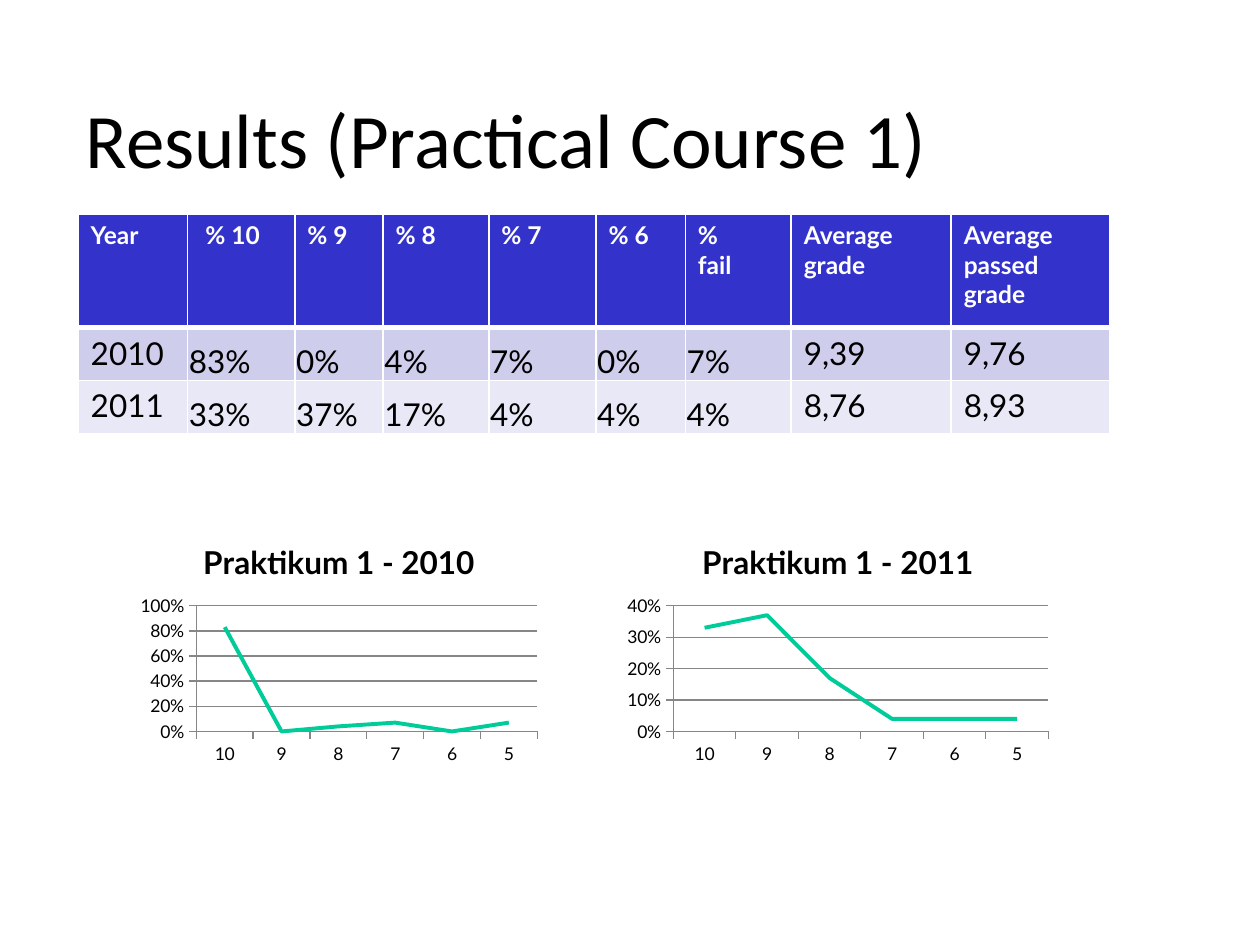
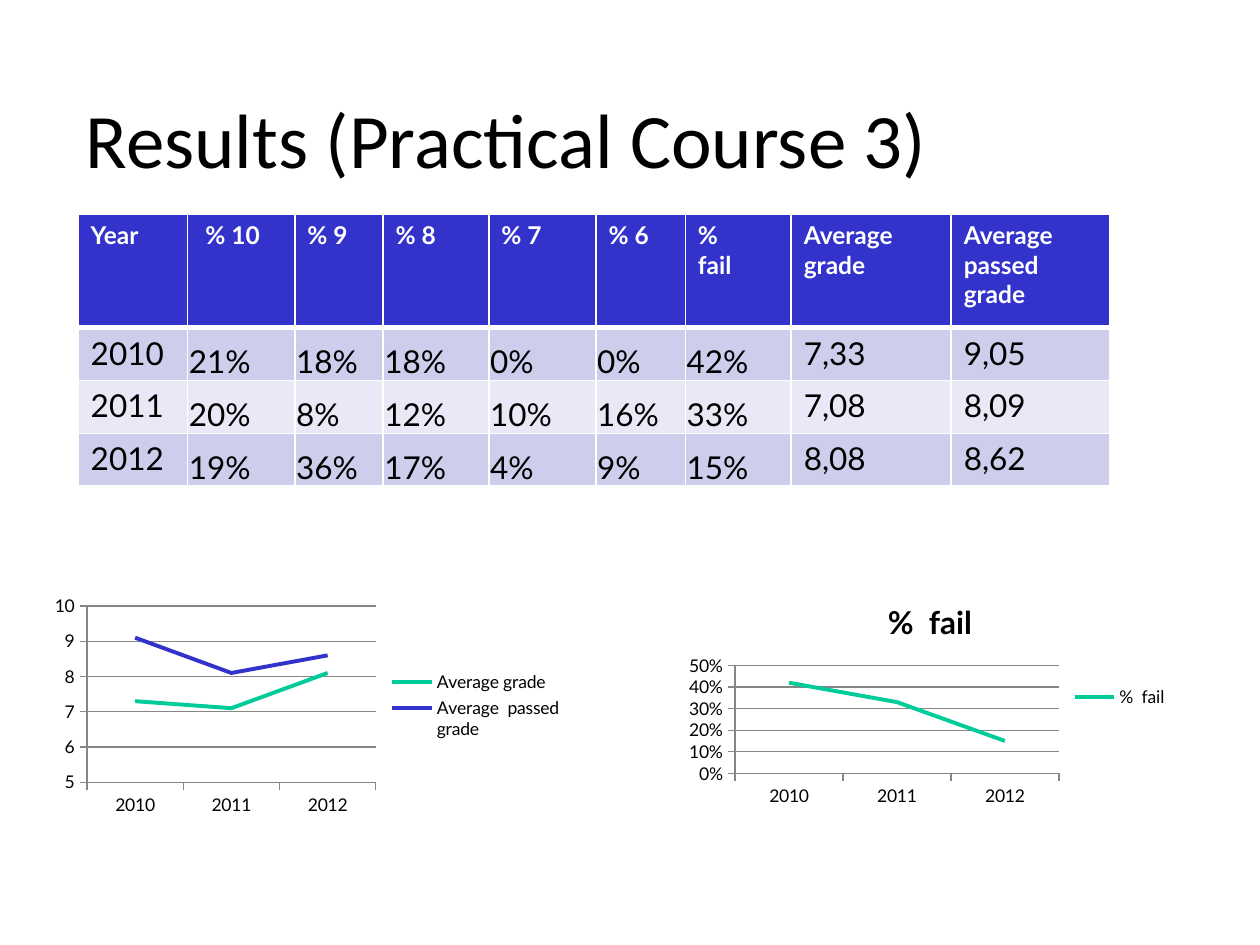
from lxml import etree
from pptx import Presentation
from pptx.chart.data import CategoryChartData
from pptx.dml.color import RGBColor
from pptx.enum.chart import XL_CHART_TYPE, XL_LEGEND_POSITION, XL_TICK_MARK
from pptx.enum.text import MSO_ANCHOR, MSO_AUTO_SIZE, PP_ALIGN
from pptx.oxml.ns import qn
from pptx.util import Inches, Pt

LINE_CHART = XL_CHART_TYPE.LINE
LEGEND_RIGHT = XL_LEGEND_POSITION.RIGHT
TICK_OUTSIDE = XL_TICK_MARK.OUTSIDE
TICK_NONE = XL_TICK_MARK.NONE
TOP, MIDDLE, BOTTOM = MSO_ANCHOR.TOP, MSO_ANCHOR.MIDDLE, MSO_ANCHOR.BOTTOM
LEFT = PP_ALIGN.LEFT
NO_AUTOFIT = MSO_AUTO_SIZE.NONE
TITLE_ONLY = 5

BLACK, WHITE, GRAY = "000000", "FFFFFF", "868686"
BLUE, GREEN = "3333CC", "00CC99"
BANDS = ("CECEEC", "E8E8F6")

TITLE_FORMAT = {"name": "Calibri", "size": Pt(44), "bold": False}
HEADER_FORMAT = {"name": "Lato", "size": Pt(14), "bold": True}
BODY_FORMAT = {"name": "Lato", "size": Pt(18), "bold": False}
CHART_FORMAT = {"name": "Lato", "size": Pt(10), "bold": False}
CHART_TITLE_FORMAT = {"name": "Lato", "size": Pt(18), "bold": True}

PERCENT_MARGINS = {"margin_left": 0.01, "margin_top": 0.01,
                   "margin_right": 0.01, "margin_bottom": 0}
HEADERS = ["Year", "% 10", "% 9", "% 8", "% 7", "% 6", "%\vfail",
           "Average grade", "Average passed\vgrade"]
COLUMN_WIDTHS = [0.87, 0.85, 0.7, 0.84, 0.85, 0.71, 0.84, 1.27, 1.26]
HEADER_HEIGHT, ROW_HEIGHT = 0.9, 0.42
PERCENT_COLUMNS = range(1, 7)
FAIL_COLUMN, AVERAGE_COLUMN, PASSED_COLUMN = 6, 7, 8
GRADES = ["10", "9", "8", "7", "6", "5"]

COURSE_1 = [
    ["2010", "83%", "0%", "4%", "7%", "0%", "7%", "9,39", "9,76"],
    ["2011", "33%", "37%", "17%", "4%", "4%", "4%", "8,76", "8,93"],
]
COURSE_3 = [
    ["2010", "21%", "18%", "18%", "0%", "0%", "42%", "7,33", "9,05"],
    ["2011", "20%", "8%", "12%", "10%", "16%", "33%", "7,08", "8,09"],
    ["2012", "19%", "36%", "17%", "4%", "9%", "15%", "8,08", "8,62"],
]
AVERAGES = {"Average grade": [7.3, 7.1, 8.1],
            "Average  passed  grade": [9.1, 8.1, 8.6]}
FAIL_NAME = "%  fail"


def rgb(color):
    """Turn a hex string into a colour."""
    return RGBColor.from_string(color)


def format_font(font, settings, color):
    """Apply a dict of settings and a colour to a font."""
    for name, value in settings.items():
        setattr(font, name, value)
    font.color.rgb = rgb(color)


def share(text):
    """Read a percentage from the table as a fraction."""
    return int(text.rstrip("%")) / 100


def add_titled_slide(presentation, text):
    """Add a slide with a left-aligned title."""
    slide = presentation.slides.add_slide(presentation.slide_layouts[TITLE_ONLY])
    title = slide.shapes.title
    title.left, title.top, title.width, title.height = map(
        Inches, (0.58, 0.52, 8.92, 1.15))
    frame = title.text_frame
    frame.text = text
    frame.auto_size = NO_AUTOFIT
    frame.vertical_anchor = MIDDLE
    paragraph = frame.paragraphs[0]
    paragraph.alignment = LEFT
    format_font(paragraph.font, TITLE_FORMAT, BLACK)
    return slide


def set_borders(cell, bottom_width):
    """Draw white borders round a cell."""
    properties = cell._tc.get_or_add_tcPr()
    widths = {"a:lnL": 1, "a:lnR": 1, "a:lnT": 1, "a:lnB": bottom_width}
    for tag, width in widths.items():
        line = etree.SubElement(properties, qn(tag), w=str(Pt(width)))
        fill = etree.SubElement(line, qn("a:solidFill"))
        etree.SubElement(fill, qn("a:srgbClr"), val=WHITE)


def fill_cell(cell, text, settings, color, fill, bottom_width=1):
    """Write and colour one table cell."""
    set_borders(cell, bottom_width)
    cell.fill.solid()
    cell.fill.fore_color.rgb = rgb(fill)
    cell.vertical_anchor = TOP
    cell.text = text
    format_font(cell.text_frame.paragraphs[0].font, settings, color)


def add_results_table(slide, results):
    """Add the table of grade shares and averages per year."""
    height = HEADER_HEIGHT + ROW_HEIGHT * len(results)
    table = slide.shapes.add_table(
        len(results) + 1, len(HEADERS), Inches(0.62), Inches(1.7),
        Inches(sum(COLUMN_WIDTHS)), Inches(height)).table
    for index, (header, width) in enumerate(zip(HEADERS, COLUMN_WIDTHS)):
        table.columns[index].width = Inches(width)
        fill_cell(table.cell(0, index), header, HEADER_FORMAT, WHITE, BLUE, 3)
    table.cell(0, 1).margin_left = Inches(0.14)
    table.rows[0].height = Inches(HEADER_HEIGHT)
    for row_index, row in enumerate(results, 1):
        table.rows[row_index].height = Inches(ROW_HEIGHT)
        band = BANDS[(row_index - 1) % 2]
        for index, text in enumerate(row):
            cell = table.cell(row_index, index)
            fill_cell(cell, text, BODY_FORMAT, BLACK, band)
            if index in PERCENT_COLUMNS:
                cell.vertical_anchor = BOTTOM
                for name, margin in PERCENT_MARGINS.items():
                    setattr(cell, name, Inches(margin))


def style_axis(axis):
    """Give an axis a gray line and outside ticks."""
    axis.major_tick_mark = TICK_OUTSIDE
    axis.minor_tick_mark = TICK_NONE
    axis.format.line.color.rgb = rgb(GRAY)
    axis.format.line.width = Pt(0.75)


def add_line_chart(slide, box, categories, series, number_format,
                   title=None, legend=False):
    """Add a line chart and return it."""
    data = CategoryChartData(number_format=number_format)
    data.categories = categories
    for name, values in series.items():
        data.add_series(name, values)
    chart = slide.shapes.add_chart(LINE_CHART, *map(Inches, box), data).chart
    format_font(chart.font, CHART_FORMAT, BLACK)
    chart.has_title = title is not None
    if title:
        frame = chart.chart_title.text_frame
        frame.text = title
        format_font(frame.paragraphs[0].runs[0].font, CHART_TITLE_FORMAT, BLACK)
    chart.has_legend = legend
    if legend:
        chart.legend.position = LEGEND_RIGHT
        chart.legend.include_in_layout = False
    style_axis(chart.category_axis)
    value_axis = chart.value_axis
    style_axis(value_axis)
    value_axis.has_major_gridlines = True
    value_axis.major_gridlines.format.line.color.rgb = rgb(GRAY)
    value_axis.tick_labels.number_format = number_format
    value_axis.tick_labels.number_format_is_linked = False
    chart.plots[0].vary_by_categories = False
    for line, color in zip(chart.plots[0].series, (GREEN, BLUE)):
        line.smooth = False
        line.format.line.color.rgb = rgb(color)
        line.format.line.width = Pt(2.25)
    return chart


def add_course_1(presentation):
    """Add the results of the first practical course."""
    slide = add_titled_slide(presentation, "Results (Practical Course 1)")
    add_results_table(slide, COURSE_1)
    boxes = [(1.05, 4.14, 3.28, 1.97), (4.91, 4.14, 3.48, 1.97)]
    for box, row in zip(boxes, COURSE_1):
        name = f"Praktikum 1 - {row[0]}"
        shares = [share(row[index]) for index in PERCENT_COLUMNS]
        add_line_chart(slide, box, GRADES, {name: shares}, "0%", name)


def add_course_3(presentation):
    """Add the results of the third practical course."""
    slide = add_titled_slide(presentation, "Results (Practical Course 3)")
    add_results_table(slide, COURSE_3)
    years = [row[0] for row in COURSE_3]
    chart = add_line_chart(slide, (0.35, 4.69, 4.25, 1.82), years, AVERAGES,
                           "General", legend=True)
    chart.value_axis.minimum_scale = 5
    chart.value_axis.major_unit = 1
    failures = {FAIL_NAME: [share(row[FAIL_COLUMN]) for row in COURSE_3]}
    add_line_chart(slide, (5.39, 4.62, 3.98, 1.82), years, failures, "0%",
                   FAIL_NAME, legend=True)


def main():
    """Build and save the presentation."""
    presentation = Presentation()
    presentation.slide_width = Inches(10)
    presentation.slide_height = Inches(7.5)
    add_course_1(presentation)
    add_course_3(presentation)
    presentation.save("out.pptx")


if __name__ == "__main__":
    main()
